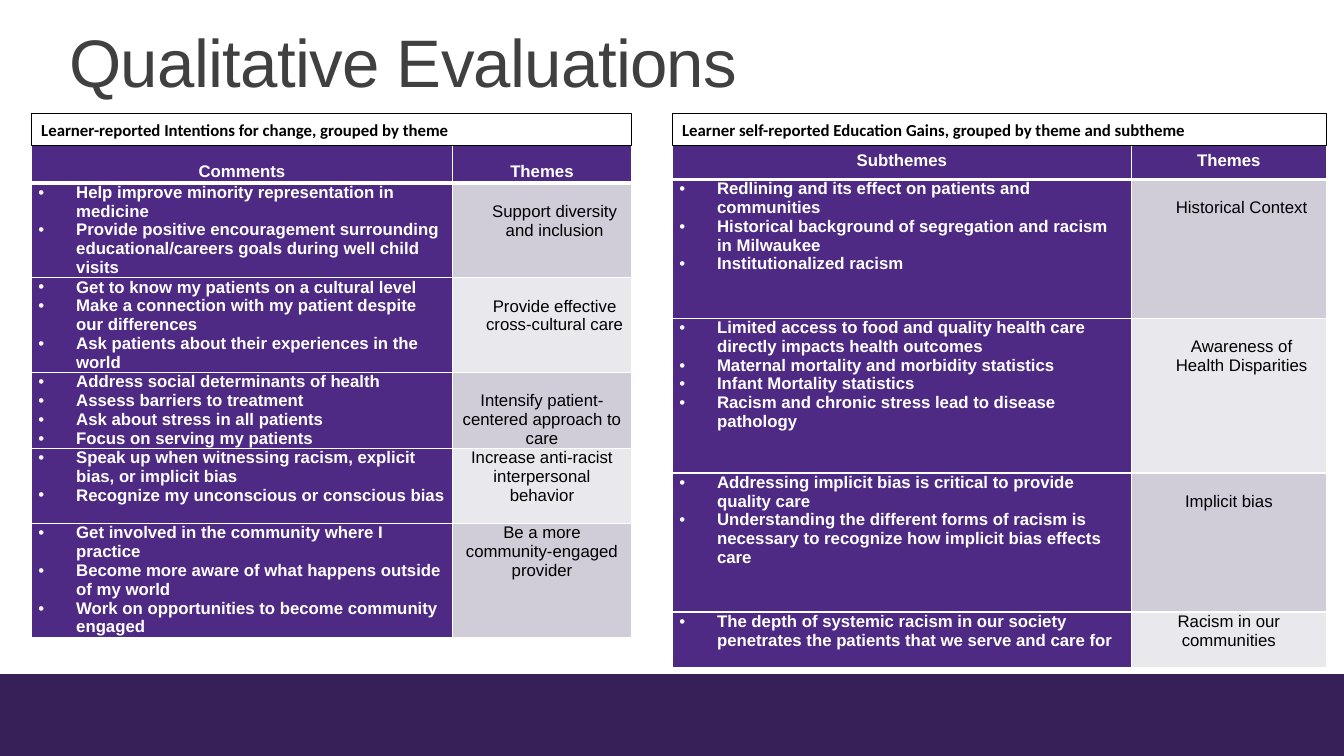
from lxml import etree
from pptx import Presentation
from pptx.dml.color import RGBColor
from pptx.enum.shapes import MSO_SHAPE as Shape
from pptx.enum.text import MSO_ANCHOR as Anchor, PP_ALIGN as Align
from pptx.oxml import parse_xml
from pptx.oxml.ns import nsdecls, qn
from pptx.util import Cm, Pt

PURPLE, WHITE, BLACK = "4E2A84", "FFFFFF", "000000"
BANDS = ["D0CDD9", "E9E8ED"]
GAP, INDENT = 0.48, 0.64  # drop of a theme below its row top; its left indent


def paint(thing, hue):
    """Give a fill, line fill or font a solid colour."""
    if hasattr(thing, "solid"):
        thing.solid()
        thing.fore_color.rgb = RGBColor.from_string(hue)
    else:
        thing.color.rgb = RGBColor.from_string(hue)


def fill_cell(cell, lines, hue, ink, row, drop=0, left=0, bullet=False):
    """Write one paragraph per line, then colour and border the cell."""
    cell.margin_left = cell.margin_right = Cm(0.18)
    cell.margin_top, cell.margin_bottom = Cm(drop), 0
    frame = cell.text_frame
    frame.text = "\n".join(lines)
    for para in frame.paragraphs:
        props = para._p.get_or_add_pPr()
        if bullet:
            props.set("marL", str(Cm(0.95)))
            props.set("indent", str(-Cm(0.95)))
            etree.SubElement(props, qn("a:buFont")).set("typeface", "Arial")
            etree.SubElement(props, qn("a:buChar")).set("char", "•")
        else:
            props.set("marL", str(Cm(left)))
            para.alignment = Align.CENTER
        para.font.name, para.font.size = "Arial", Pt(12)
        para.font.bold = ink == WHITE
        paint(para.font, ink)
    paint(cell.fill, hue)
    props = cell._tc.get_or_add_tcPr()
    for spot, side in enumerate("LRTB"):
        thick = (row, side) in [(0, "B"), (1, "T")]
        props.insert(spot, parse_xml(
            f'<a:ln{side} {nsdecls("a")} w="{Pt(3 if thick else 1)}"><a:solidFill>'
            f'<a:srgbClr val="{WHITE}"/></a:solidFill></a:ln{side}>'))


# Each row: height, comments, theme lines, theme drop, theme indent
intents = [
    (2.39, ["Help improve minority representation in medicine",
            "Provide positive encouragement surrounding educational/careers goals "
            "during well child visits"],
     ["Support diversity", "and inclusion"], GAP, INDENT),
    (2.39, ["Get to know my patients on a cultural level",
            "Make a connection with my patient despite our differences",
            "Ask patients about their experiences in the world"],
     ["Provide effective", "cross-cultural care"], GAP, INDENT),
    (1.9, ["Address social determinants of health", "Assess barriers to treatment",
           "Ask about stress in all patients", "Focus on serving my patients"],
     ["Intensify patient-centered approach to care"], GAP, 0),
    (1.9, ["Speak up when witnessing racism, explicit bias, or implicit bias",
           "Recognize my unconscious or conscious bias"],
     ["Increase anti-racist interpersonal behavior"], 0, 0),
    (2.87, ["Get involved in the community where I practice",
            "Become more aware of what happens outside of my world",
            "Work on opportunities to become community engaged"],
     ["Be a more community-engaged provider"], 0, 0),
]
gains = [
    (3.5, ["Redlining and its effect on patients and communities",
           "Historical background of segregation and racism in Milwaukee",
           "Institutionalized racism"],
     ["Historical Context"], GAP, INDENT),
    (3.9, ["Limited access to food and quality health care directly impacts health outcomes",
           "Maternal mortality and morbidity statistics", "Infant Mortality statistics",
           "Racism and chronic stress lead to disease pathology"],
     ["Awareness of", "Health Disparities"], GAP, INDENT),
    (3.5, ["Addressing implicit bias is critical to provide quality care",
           "Understanding the different forms of racism is necessary to recognize "
           "how implicit bias effects care"],
     ["Implicit bias"], GAP, 0),
    (1.4, ["The depth of systemic racism in our society penetrates the patients "
           "that we serve and care for"],
     ["Racism in our communities"], 0, 0),
]
# Each panel: label, left, column widths, table top, header height and drop, heads, rows
panels = [
    ("Learner-reported Intentions for change, grouped by theme",
     0.79, (10.62, 4.5), 3.66, 0.95, 0.44, ("Comments", "Themes"), intents),
    ("Learner self-reported Education Gains, grouped by theme and subtheme",
     16.94, (11.58, 4.9), 2.87, 1.65, 0.94, ("Subthemes", "Themes"), gains),
]

deck = Presentation()
deck.slide_width, deck.slide_height = Cm(33.87), Cm(19.05)
slide = deck.slides.add_slide(deck.slide_layouts[6])
shapes = slide.shapes

band = shapes.add_shape(Shape.RECTANGLE, 0, Cm(16.99), deck.slide_width, Cm(2.06))
band.shadow.inherit = False
paint(band.fill, "372058")
band.line.fill.background()

for label, x, widths, top, tall, drop, heads, rows in panels:
    wide = sum(widths)
    high = tall + sum(row[0] for row in rows)
    table = shapes.add_table(len(rows) + 1, 2, Cm(x), Cm(top), Cm(wide), Cm(high)).table
    table.horz_banding = False
    for col, width in zip(table.columns, widths):
        col.width = Cm(width)
    table.rows[0].height = Cm(tall)
    for col, head in enumerate(heads):
        fill_cell(table.cell(0, col), [head], PURPLE, WHITE, 0, drop)
    for n, (height, notes, theme, fall, left) in enumerate(rows, 1):
        table.rows[n].height = Cm(height)
        fill_cell(table.cell(n, 0), notes, PURPLE, WHITE, n, bullet=True)
        fill_cell(table.cell(n, 1), theme, BANDS[(n - 1) % 2], BLACK, n, fall, left)

    box = shapes.add_shape(Shape.RECTANGLE, Cm(x), Cm(2.87), Cm(wide), Cm(0.79))
    box.shadow.inherit = False
    paint(box.fill, WHITE)
    paint(box.line.fill, BLACK)
    box.line.width = Pt(0.75)
    box.text_frame.text = label
    para = box.text_frame.paragraphs[0]
    para.alignment = Align.LEFT
    para.font.name, para.font.size, para.font.bold = "Calibri", Pt(12), True
    paint(para.font, BLACK)

title = shapes.add_textbox(Cm(1.5), Cm(0.28), Cm(27.94), Cm(2.39)).text_frame
title.word_wrap = True
title.vertical_anchor = Anchor.BOTTOM
title.text = "Qualitative Evaluations"
para = title.paragraphs[0]
para.line_spacing = 0.85
para.font.name, para.font.size = "Arial", Pt(48)
paint(para.font, "404040")
para.runs[0]._r.get_or_add_rPr().set("spc", "-50")

deck.save("out.pptx")
